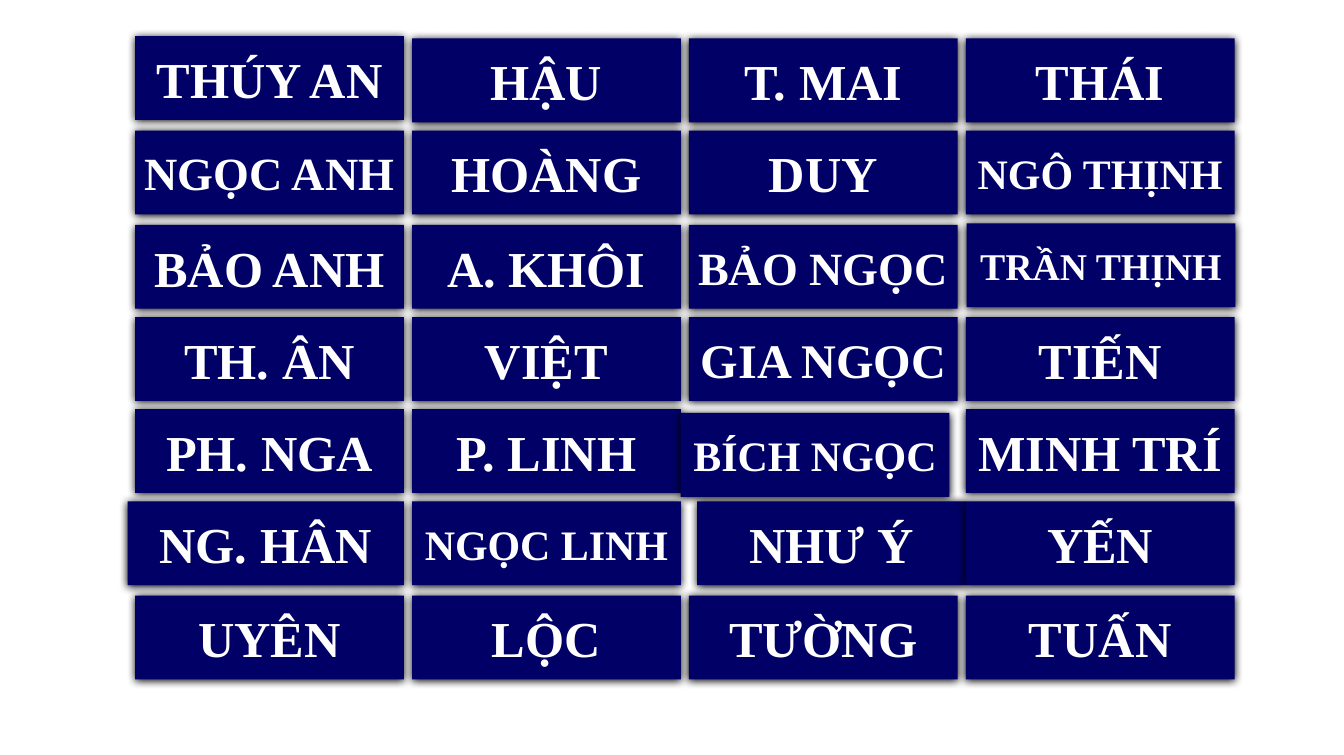
from lxml.etree import SubElement
from pptx import Presentation
from pptx.dml.color import RGBColor
from pptx.enum.shapes import MSO_SHAPE
from pptx.enum.text import MSO_ANCHOR, PP_ALIGN
from pptx.oxml.ns import qn
from pptx.util import Inches, Pt

NAVY = RGBColor(0x00, 0x00, 0x66)
WHITE = RGBColor(0xFF, 0xFF, 0xFF)
BLACK = RGBColor(0x00, 0x00, 0x00)

CARD_WIDTH, CARD_HEIGHT = 3.56, 1.11
FIRST_LEFT, COLUMN_STEP = 1.79, 3.667
ROW_TOPS = [0.51, 1.73, 2.98, 4.2, 5.42, 6.64, 7.89]

NAMES = [
    ["THÚY AN", "HẬU", "T. MAI", "THÁI"],
    ["NGỌC ANH", "HOÀNG", "DUY", "NGÔ THỊNH"],
    ["BẢO ANH", "A. KHÔI", "BẢO NGỌC", "TRẦN THỊNH"],
    ["TH. ÂN", "VIỆT", "GIA NGỌC", "TIẾN"],
    ["PH. NGA", "P. LINH", "BÍCH NGỌC", "MINH TRÍ"],
    ["NG. HÂN", "NGỌC LINH", "NHƯ Ý", "YẾN"],
    ["UYÊN", "LỘC", "TƯỜNG", "TUẤN"],
]
# Long names take a smaller size than the usual one.
NAME_SIZES = {
    "NGỌC ANH": 44, "NGÔ THỊNH": 40, "BẢO NGỌC": 44, "TRẦN THỊNH": 36,
    "GIA NGỌC": 46, "BÍCH NGỌC": 40, "NGỌC LINH": 40,
}
# Cards that sit off the grid: shift right, shift down, extra width.
NUDGES = {
    "THÚY AN": (0, -0.03, 0),
    "TRẦN THỊNH": (0.01, -0.02, 0),
    "BÍCH NGỌC": (-0.11, 0.05, 0),
    "NG. HÂN": (-0.1, 0, 0.1),
    "NHƯ Ý": (0.11, 0, 0),
}


class CardSlide:
    font_name = "Times New Roman"
    font_size = 48

    def __init__(self, deck):
        self.slide = deck.slides.add_slide(deck.slide_layouts[6])

    def add_card(self, name, left, top, width):
        card = self.slide.shapes.add_shape(
            MSO_SHAPE.RECTANGLE, Inches(left), Inches(top),
            Inches(width), Inches(CARD_HEIGHT))
        card.fill.solid()
        card.fill.fore_color.rgb = NAVY
        card.line.fill.background()
        self.add_shadow(card)
        frame = card.text_frame
        frame.word_wrap = True
        frame.vertical_anchor = MSO_ANCHOR.MIDDLE
        para = frame.paragraphs[0]
        para.alignment = PP_ALIGN.CENTER
        span = para.add_run()
        span.text = name
        span.font.name = self.font_name
        span.font.size = Pt(NAME_SIZES.get(name, self.font_size))
        span.font.bold = True
        span.font.color.rgb = WHITE

    def add_shadow(self, card):
        """Give the card a soft black shadow falling straight down."""
        card.shadow.inherit = False
        effects = card._element.spPr.find(qn("a:effectLst"))
        shadow = SubElement(
            effects, qn("a:outerShdw"), blurRad=str(Pt(8.5)), dist=str(Pt(1)),
            dir=str(90 * 60000), algn="tl", rotWithShape="0")
        SubElement(shadow, qn("a:srgbClr"), val=str(BLACK))


def main():
    deck = Presentation()
    deck.slide_width = Inches(17.8)
    deck.slide_height = Inches(10)
    page = CardSlide(deck)
    for top, row in zip(ROW_TOPS, NAMES):
        for column, name in enumerate(row):
            right, down, extra = NUDGES.get(name, (0, 0, 0))
            left = FIRST_LEFT + column * COLUMN_STEP
            page.add_card(name, left + right, top + down, CARD_WIDTH + extra)
    deck.save("out.pptx")


if __name__ == "__main__":
    main()
